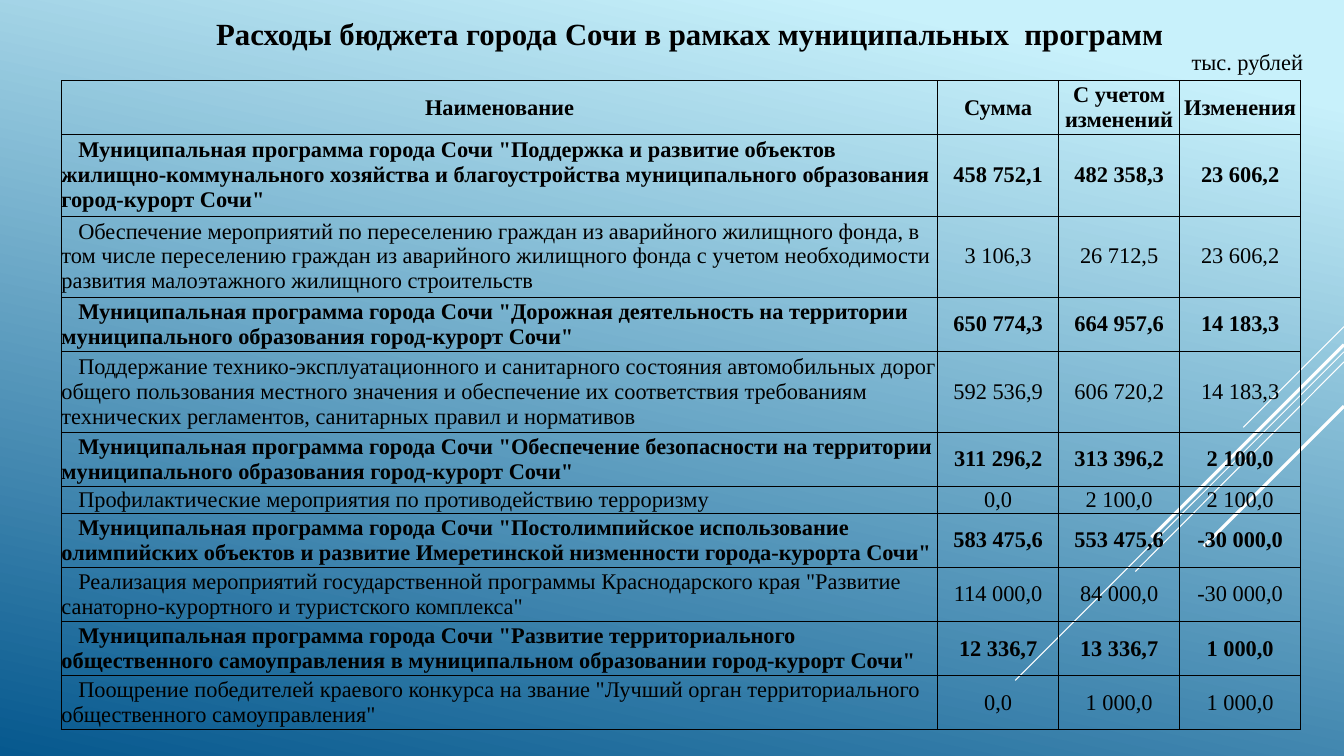
from typing import Any, NamedTuple

from lxml.etree import SubElement
from pptx import Presentation
from pptx.dml.color import RGBColor
from pptx.enum.shapes import MSO_CONNECTOR as Conn
from pptx.enum.text import MSO_ANCHOR as Anchor, MSO_AUTO_SIZE as Fit, PP_ALIGN as Align
from pptx.oxml.ns import qn
from pptx.util import Inches, Pt


class Ray(NamedTuple):
    top: float
    left: float
    foot: float
    weight: float


class Row(NamedTuple):
    lines: int
    bold: bool
    name: str
    sums: tuple[str, str, str]


WIDE, HIGH = 13.33, 7.5
LINE = 6.44 / 24
COLS = (8.69, 1.2, 1.2, 1.2)
RAYS = (
    Ray(3.24, 12.33, 4.24, 0.75),
    Ray(3.49, 10.07, 6.75, 0.75),
    Ray(3.59, 11.26, 5.67, 0.75),
    Ray(3.42, 11.42, 5.33, 2.25),
    Ray(4.03, 11.94, 5.42, 2.25),
)
ROWS = (
    Row(2, True, "Наименование", ("Сумма", "С учетом изменений", "Изменения")),
    Row(3, True, 'Муниципальная программа города Сочи "Поддержка и развитие объектов '
        'жилищно-коммунального хозяйства и благоустройства муниципального образования '
        'город-курорт Сочи"', ("458 752,1", "482 358,3", "23 606,2")),
    Row(3, False, "Обеспечение мероприятий по переселению граждан из аварийного жилищного "
        "фонда, в том числе переселению граждан из аварийного жилищного фонда с учетом "
        "необходимости развития малоэтажного жилищного строительств",
        ("3 106,3", "26 712,5", "23 606,2")),
    Row(2, True, 'Муниципальная программа города Сочи "Дорожная деятельность на территории '
        'муниципального образования город-курорт Сочи"',
        ("650 774,3", "664 957,6", "14 183,3")),
    Row(3, False, "Поддержание технико-эксплуатационного и санитарного состояния "
        "автомобильных дорог общего пользования местного значения и обеспечение их "
        "соответствия требованиям технических регламентов, санитарных правил и нормативов",
        ("592 536,9", "606 720,2", "14 183,3")),
    Row(2, True, 'Муниципальная программа города Сочи "Обеспечение безопасности на '
        'территории муниципального образования город-курорт Сочи"',
        ("311 296,2", "313 396,2", "2 100,0")),
    Row(1, False, "Профилактические мероприятия по противодействию терроризму",
        ("0,0", "2 100,0", "2 100,0")),
    Row(2, True, 'Муниципальная программа города Сочи "Постолимпийское использование '
        'олимпийских объектов и развитие Имеретинской низменности города-курорта Сочи"',
        ("583 475,6", "553 475,6", "-30 000,0")),
    Row(2, False, 'Реализация мероприятий государственной программы Краснодарского края '
        '"Развитие санаторно-курортного и туристского комплекса"',
        ("114 000,0", "84 000,0", "-30 000,0")),
    Row(2, True, 'Муниципальная программа города Сочи "Развитие территориального '
        'общественного самоуправления в муниципальном образовании город-курорт Сочи"',
        ("12 336,7", "13 336,7", "1 000,0")),
    Row(2, False, 'Поощрение победителей краевого конкурса на звание "Лучший орган '
        'территориального общественного самоуправления"',
        ("0,0", "1 000,0", "1 000,0")),
)


def paint(color: Any, tone: str) -> None:
    color.rgb = RGBColor.from_string(tone)


def write(frame: Any, text: str, *, size: float = 16, bold: bool = False,
          align: Align = Align.LEFT, indent: float = 0) -> None:
    frame.word_wrap = True
    para = frame.paragraphs[0]
    para.alignment = align
    if indent:
        para._p.get_or_add_pPr().set("indent", str(Pt(indent)))
    run = para.add_run()
    run.text = text
    run.font.name = "Times New Roman"
    run.font.size = Pt(size)
    run.font.bold = bold
    paint(run.font.color, "000000")


def place(shape: Any, left: float, top: float, width: float, height: float) -> None:
    shape.left, shape.top = Inches(left), Inches(top)
    shape.width, shape.height = Inches(width), Inches(height)


def shade(slide: Any) -> None:
    fill = slide.background.fill
    fill.gradient()
    fill.gradient_angle = 360 - 102
    for stop, spot, tone in zip(fill.gradient_stops, (0.1, 1), ("C8F1FB", "06588E")):
        stop.position = spot
        paint(stop.color, tone)


def draw_ray(slide: Any, ray: Ray) -> None:
    line = slide.shapes.add_connector(Conn.STRAIGHT, Inches(WIDE), Inches(ray.top),
                                      Inches(ray.left), Inches(ray.foot))
    paint(line.line.color, "FFFFFF")
    line.line.width = Pt(ray.weight)
    SubElement(line._element.spPr, qn("a:effectLst"))


def frame_cell(cell: Any) -> None:
    props = cell._tc.get_or_add_tcPr()
    for side in ("a:lnL", "a:lnR", "a:lnT", "a:lnB"):
        edge = SubElement(props, qn(side), w=str(Pt(0.5)))
        SubElement(SubElement(edge, qn("a:solidFill")), qn("a:srgbClr"), val="000000")
    cell.fill.background()
    cell.vertical_anchor = Anchor.MIDDLE
    cell.margin_left = cell.margin_right = cell.margin_top = cell.margin_bottom = 0


def draw_table(slide: Any) -> None:
    table = slide.shapes.add_table(len(ROWS), len(COLS), Inches(0.61), Inches(0.8),
                                   Inches(sum(COLS)), Inches(LINE * 24)).table
    table.first_row = table.horz_banding = False
    for col, width in zip(table.columns, COLS):
        col.width = Inches(width)
    for r, row in enumerate(ROWS):
        table.rows[r].height = Inches(LINE * row.lines)
        for c, text in enumerate((row.name, *row.sums)):
            cell = table.cell(r, c)
            frame_cell(cell)
            label = r > 0 and c == 0
            write(cell.text_frame, text, bold=row.bold, indent=12 if label else 0,
                  align=Align.LEFT if label else Align.CENTER)


def main() -> None:
    """Build the slide on city budget spending by programme."""
    deck = Presentation()
    deck.slide_width, deck.slide_height = Inches(WIDE), Inches(HIGH)
    slide = deck.slides.add_slide(deck.slide_layouts[5])
    shade(slide)
    for ray in RAYS:
        draw_ray(slide, ray)
    title = slide.shapes.title
    place(title, 2.03, 0.09, 9.62, 0.47)
    frame = title.text_frame
    frame.auto_size = Fit.NONE
    frame.vertical_anchor = Anchor.MIDDLE
    frame.margin_left = frame.margin_right = 0
    write(frame, "Расходы бюджета города Сочи в рамках муниципальных  программ",
          size=22, bold=True, align=Align.CENTER)
    unit = slide.shapes.add_textbox(0, 0, 0, 0)
    place(unit, 11.72, 0.43, 1.51, 0.37)
    write(unit.text_frame, "тыс. рублей")
    draw_table(slide)
    deck.save("out.pptx")


if __name__ == "__main__":
    main()
